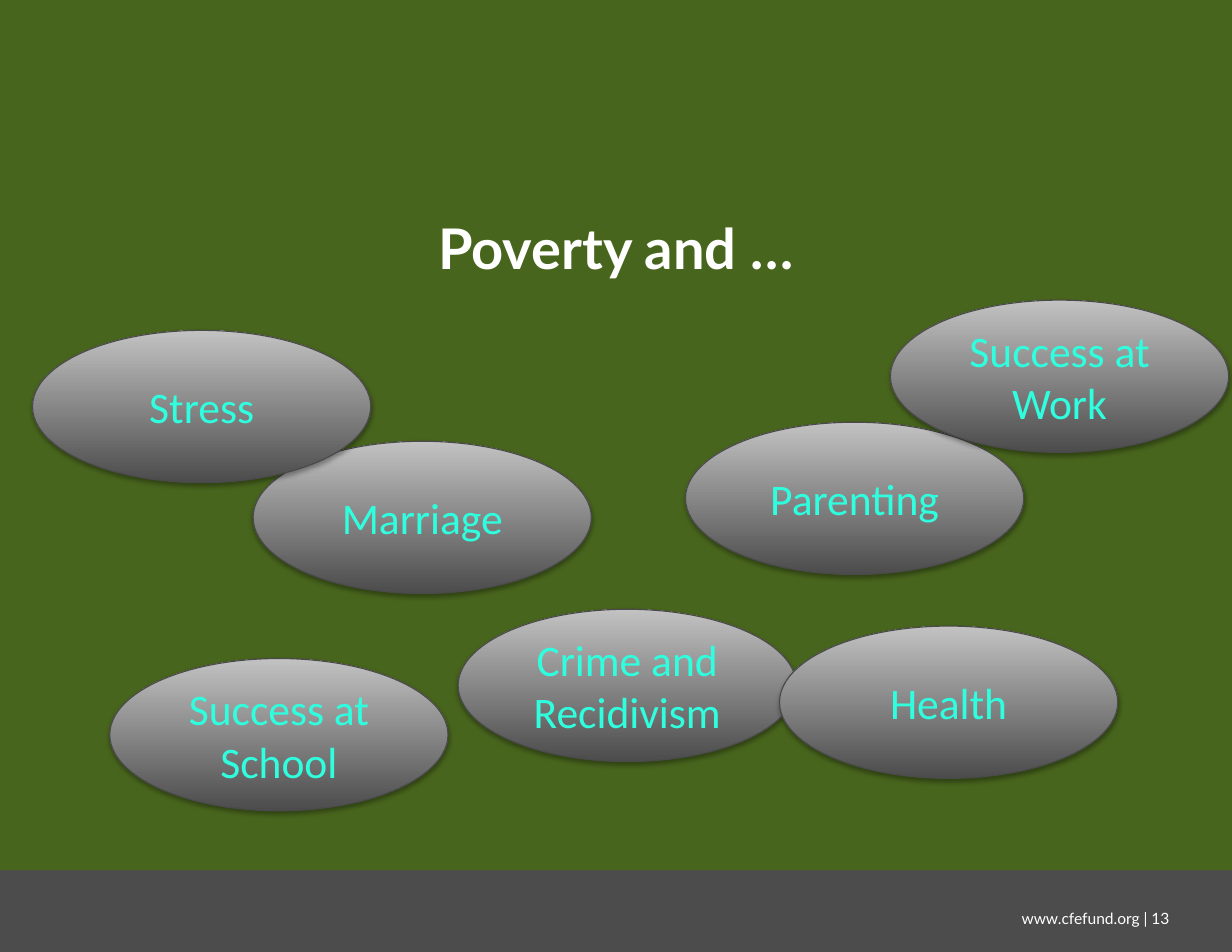
from dataclasses import dataclass

from lxml import etree
from pptx import Presentation
from pptx.dml.color import RGBColor
from pptx.enum.shapes import MSO_SHAPE
from pptx.enum.text import MSO_ANCHOR, PP_ALIGN
from pptx.oxml.ns import qn
from pptx.util import Inches, Pt


@dataclass(frozen=True)
class Theme:
    green: str = "48651D"
    dark: str = "4C4C4C"
    light: str = "C2C2C2"
    outline: str = "4A4A4A"
    white: str = "FFFFFF"
    aqua: str = "2FFFDE"
    shadow: str = "000000"
    heading_font: str = "Lato"
    body_font: str = "Calibri"
    title_size: int = 36
    topic_size: int = 28
    footer_size: int = 10


class SlideBuilder:
    def __init__(self, slide, theme):
        self.s = slide
        self.theme = theme

    def set_text(self, sp, text, font, size, color, align=PP_ALIGN.CENTER,
                 anchor=MSO_ANCHOR.MIDDLE, bold=False):
        tf = sp.text_frame
        tf.word_wrap = True
        tf.vertical_anchor = anchor
        p = tf.paragraphs[0]
        p.text = text
        p.alignment = align
        p.font.name = font
        p.font.size = Pt(size)
        p.font.bold = bold
        p.font.color.rgb = RGBColor.from_string(color)

    def band(self, top, height, color):
        sp = self.s.shapes.add_shape(MSO_SHAPE.RECTANGLE, 0, Inches(top),
                                     Inches(11), Inches(height))
        sp.fill.solid()
        sp.fill.fore_color.rgb = RGBColor.from_string(color)
        sp.line.fill.background()
        sp.shadow.inherit = False

    def title(self, text):
        t = self.theme
        sp = self.s.shapes.title
        sp.left, sp.top = Inches(0.55), Inches(1.5)
        sp.width, sp.height = Inches(9.9), Inches(1.42)
        self.set_text(sp, text, t.heading_font, t.title_size, t.white, bold=True)
        # Bring the title in front of the bands
        self.s.shapes._spTree.append(sp._element)

    def footer(self, text):
        t = self.theme
        sp = self.s.shapes.add_textbox(Inches(8.38), Inches(8.06),
                                       Inches(2.17), Inches(0.28))
        tf = sp.text_frame
        tf.margin_left = tf.margin_right = Inches(0.11)
        tf.margin_top = tf.margin_bottom = Inches(0.06)
        self.set_text(sp, text, t.heading_font, t.footer_size, t.white,
                      PP_ALIGN.RIGHT, MSO_ANCHOR.TOP)

    def topic(self, text, left, top):
        t = self.theme
        sp = self.s.shapes.add_shape(MSO_SHAPE.OVAL, Inches(left), Inches(top),
                                     Inches(3.02), Inches(1.36))
        sp.fill.gradient()
        sp.fill.gradient_angle = 90
        for stop, color in zip(sp.fill.gradient_stops, (t.dark, t.light)):
            stop.color.rgb = RGBColor.from_string(color)
        sp.line.color.rgb = RGBColor.from_string(t.outline)
        sp.line.width = Pt(0.75)
        self.drop_shadow(sp)
        self.set_text(sp, text, t.body_font, t.topic_size, t.aqua)

    def drop_shadow(self, sp):
        sp.shadow.inherit = False
        effects = sp._element.spPr.find(qn("a:effectLst"))
        shadow = etree.SubElement(
            effects, qn("a:outerShdw"), blurRad=str(Pt(3.1)),
            dist=str(Pt(1.8)), dir="5400000", rotWithShape="0")
        color = etree.SubElement(shadow, qn("a:srgbClr"), val=self.theme.shadow)
        etree.SubElement(color, qn("a:alpha"), val="35000")


# Topics from back to front: text, left, top
TOPICS = [
    ("Crime and Recidivism", 4.09, 5.44),
    ("Parenting", 6.12, 3.77),
    ("Success at School", 0.98, 5.88),
    ("Health", 6.96, 5.59),
    ("Marriage", 2.26, 3.94),
    ("Stress", 0.29, 2.95),
    ("Success at Work", 7.95, 2.68),
]


def main():
    prs = Presentation()
    prs.slide_width, prs.slide_height = Inches(11), Inches(8.5)
    theme = Theme()
    s = SlideBuilder(prs.slides.add_slide(prs.slide_layouts[5]), theme)

    # Footer and background
    s.band(7.76, 0.74, theme.dark)
    s.footer("www.cfefund.org | 13")
    s.band(0, 7.77, theme.green)

    # Title and topics
    s.title("Poverty and …")
    for text, left, top in TOPICS:
        s.topic(text, left, top)

    prs.save("out.pptx")


if __name__ == "__main__":
    main()
